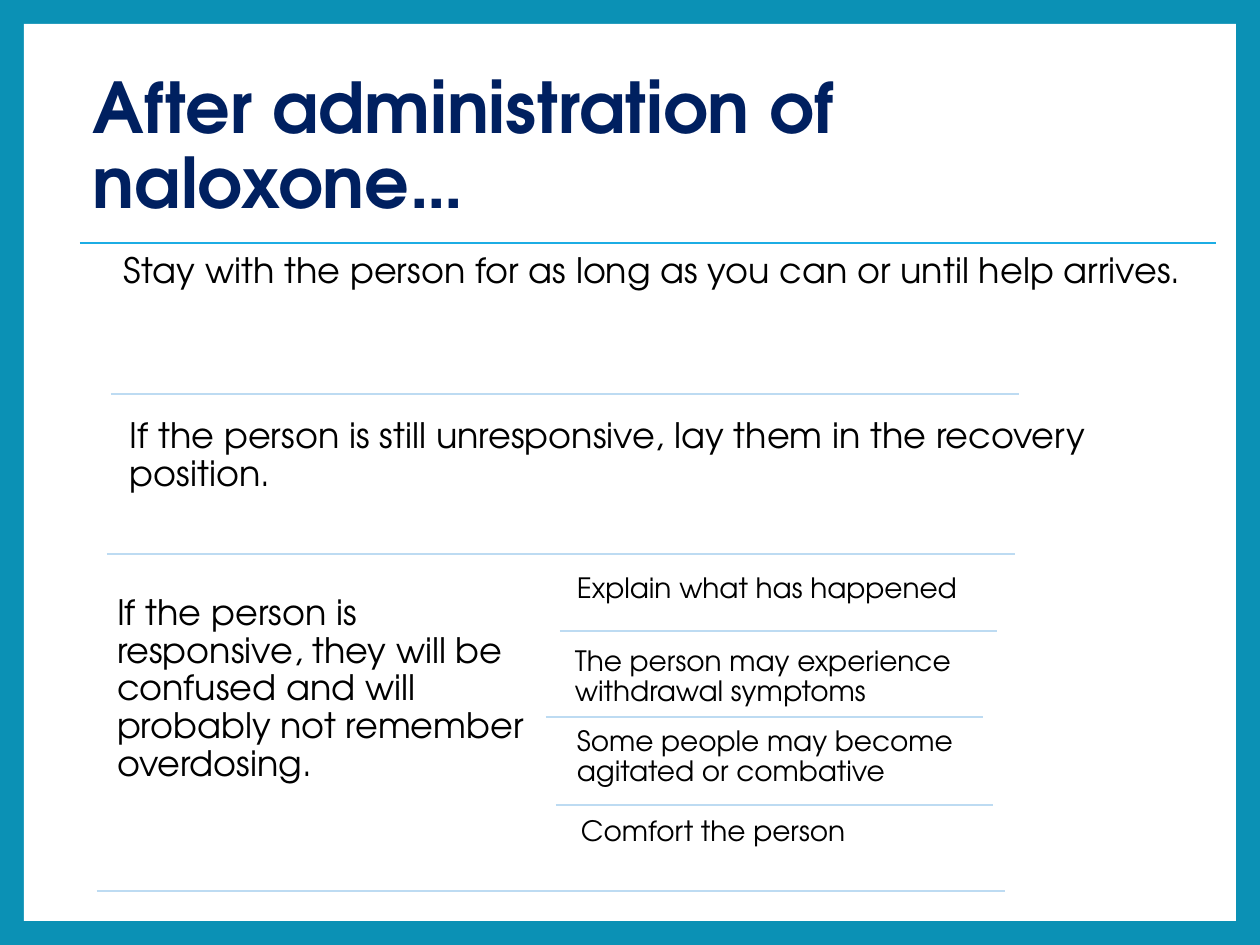
from lxml.etree import SubElement
from pptx import Presentation
from pptx.dml.color import RGBColor
from pptx.enum.shapes import MSO_CONNECTOR, MSO_SHAPE
from pptx.enum.text import MSO_ANCHOR
from pptx.oxml.ns import qn
from pptx.util import Pt

EMU_PER_PX = 914400 / 126
FONT = "TeX Gyre Adventor"
TEAL = RGBColor(0x0B, 0x91, 0xB5)
WHITE = RGBColor(0xFF, 0xFF, 0xFF)
NAVY = RGBColor(0x00, 0x20, 0x60)
BLACK = RGBColor(0x00, 0x00, 0x00)
BRIGHT_BLUE = RGBColor(0x1C, 0xAD, 0xE4)
PALE_BLUE = RGBColor(0xBD, 0xDB, 0xF2)


def px(length):
    return round(length * EMU_PER_PX)


def add_text(slide, box, text, size=20, color=BLACK, bold=False, inset=10,
             anchor=MSO_ANCHOR.TOP):
    shape = slide.shapes.add_textbox(*map(px, box))
    frame = shape.text_frame
    frame.word_wrap = True
    frame.vertical_anchor = anchor
    frame.margin_left = frame.margin_right = px(inset)
    frame.margin_top = frame.margin_bottom = px(inset)
    paragraph = frame.paragraphs[0]
    paragraph.line_spacing = 0.9
    run = paragraph.add_run()
    run.text = text
    run.font.name = FONT
    run.font.size = Pt(size)
    run.font.bold = bold
    run.font.color.rgb = color


def add_rule(slide, left, top, width, color=PALE_BLUE):
    line = slide.shapes.add_connector(
        MSO_CONNECTOR.STRAIGHT, px(left), px(top), px(left + width), px(top))
    line.line.color.rgb = color
    line.line.width = Pt(1)
    SubElement(line._element.spPr, qn("a:effectLst"))


def add_frame(slide, width, height, border):
    slide.background.fill.solid()
    slide.background.fill.fore_color.rgb = TEAL
    panel = slide.shapes.add_shape(
        MSO_SHAPE.RECTANGLE, px(border), px(border),
        px(width - 2 * border), px(height - 2 * border))
    panel.shadow.inherit = False
    panel.fill.solid()
    panel.fill.fore_color.rgb = WHITE
    panel.line.fill.background()


def add_heading(slide, left, top, width, height):
    add_text(slide, (left, top, width, height), "After administration of naloxone…",
             size=40, color=NAVY, bold=True, inset=12, anchor=MSO_ANCHOR.MIDDLE)
    add_rule(slide, left - 1, top + height, 1136, BRIGHT_BLUE)


def add_steps(slide, left, top):
    steps = [
        ("Stay with the person for as long as you can or until help arrives.",
         (17, 0, 1095, 204), (14, 151)),
        ("If the person is still unresponsive, lay them in the recovery position.",
         (23, 165, 1034, 156), (10, 311)),
        ("If the person is responsive, they will be confused and will "
         "probably not remember overdosing.",
         (10, 342, 437, 251), (0, 648)),
    ]
    for text, (x, y, width, height), (rule_x, rule_y) in steps:
        add_text(slide, (left + x, top + y, width, height), text)
        add_rule(slide, left + rule_x, top + rule_y, 908)


def add_reactions(slide, left, top, width):
    reactions = [
        ("Explain what has happened", 22, 0),
        ("The person may experience withdrawal symptoms", 20, 73),
        ("Some people may become agitated or combative", 22, 153),
        ("Comfort the person", 26, 243),
    ]
    for text, x, y in reactions:
        add_text(slide, (left + x, top + y, width, 53), text, size=16, inset=9)
    for x, y in [(14, 66), (0, 152), (10, 240)]:
        add_rule(slide, left + x, top + y, width)


def main():
    presentation = Presentation()
    presentation.slide_width = px(1260)
    presentation.slide_height = px(945)
    slide = presentation.slides.add_slide(presentation.slide_layouts[6])
    add_frame(slide, 1260, 945, 24)
    add_heading(slide, 81, 54, 1058, 189)
    add_steps(slide, 97, 243)
    add_reactions(slide, 546, 565, 437)
    presentation.save("out.pptx")


if __name__ == "__main__":
    main()
